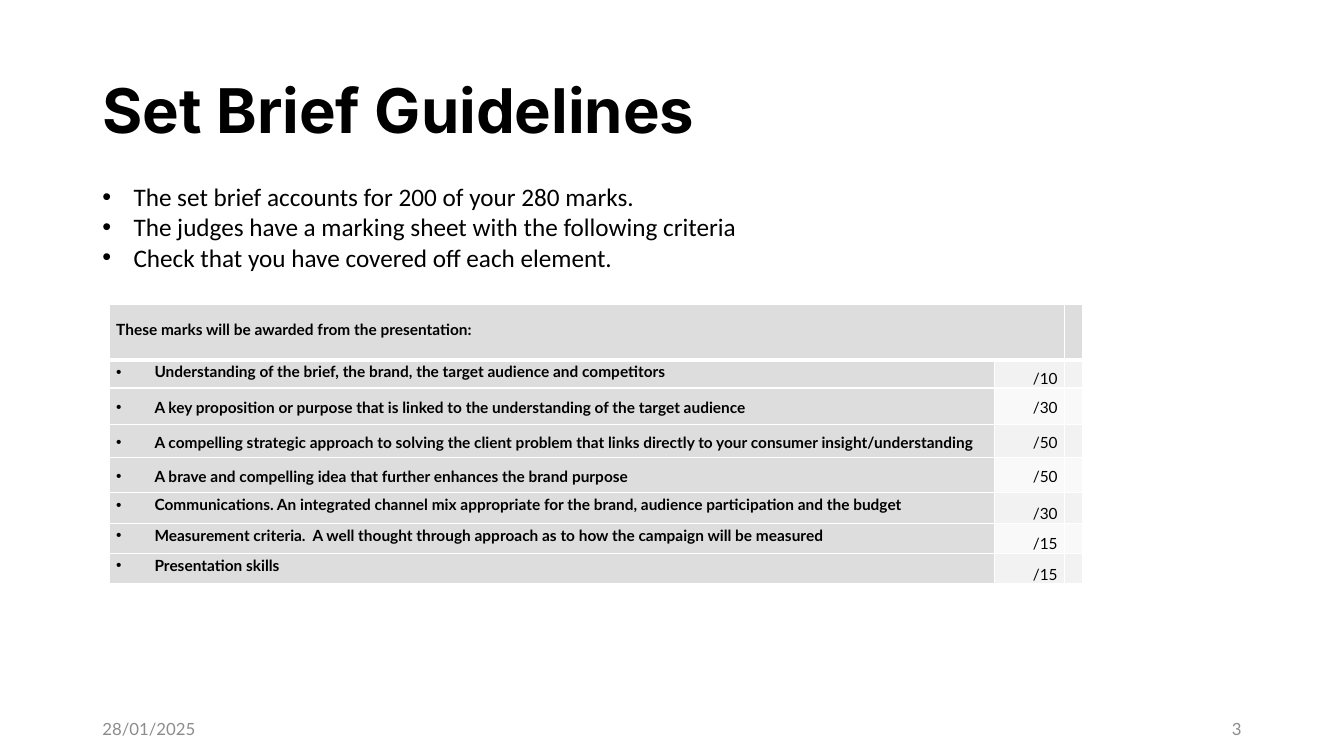
from lxml.etree import SubElement
from pptx import Presentation
from pptx.dml.color import RGBColor
from pptx.enum.text import MSO_ANCHOR, PP_ALIGN
from pptx.oxml import parse_xml
from pptx.oxml.ns import nsdecls, qn
from pptx.util import Inches, Pt

COLORS = {
    "text": "000000",
    "footer": "8C8C8C",
    "label": "DDDDDD",
    "odd": "F2F2F2",
    "even": "F9F9F9",
    "border": "FFFFFF",
}
GRID_COLUMNS, GRID_ROWS = 160, 90

BULLETS = [
    "The set brief accounts for 200 of your 280 marks.",
    "The judges have a marking sheet with the following criteria",
    "Check that you have covered off each element.",
]
TABLE_HEADING = "These marks will be awarded from the presentation:"
TOP, MIDDLE, BOTTOM = MSO_ANCHOR.TOP, MSO_ANCHOR.MIDDLE, MSO_ANCHOR.BOTTOM
CRITERIA = [
    ("Understanding of the brief, the brand, the target audience and competitors", "/10", 3.36, TOP),
    ("A key proposition or purpose that is linked to the understanding of the target audience", "/30", 4.32, MIDDLE),
    ("A compelling strategic approach to solving the client problem that links directly to your consumer insight/understanding", "/50", 3.96, MIDDLE),
    ("A brave and compelling idea that further enhances the brand purpose", "/50", 4.2, MIDDLE),
    ("Communications. An integrated channel mix appropriate for the brand, audience participation and the budget", "/30", 3.6, TOP),
    ("Measurement criteria.  A well thought through approach as to how the campaign will be measured", "/15", 3.6, TOP),
    ("Presentation skills", "/15", 3.6, TOP),
]


def write_text(frame, lines, font="Lato", size=11, color="text", bold=False,
               align=PP_ALIGN.LEFT, spacing=1.0, indent=0):
    for index, line in enumerate(lines):
        paragraph = frame.add_paragraph() if index else frame.paragraphs[0]
        paragraph.alignment = align
        paragraph.line_spacing = spacing
        paragraph.space_before = Pt(0)
        if indent:
            properties = paragraph._p.get_or_add_pPr()
            properties.set("marL", str(Inches(indent)))
            properties.set("indent", str(-Inches(indent)))
            SubElement(properties, qn("a:buFont"), typeface="Arial")
            SubElement(properties, qn("a:buChar"), char="•")
        run = paragraph.add_run()
        run.text = line
        run.font.name = font
        run.font.size = Pt(size)
        run.font.bold = bold
        run.font.color.rgb = RGBColor.from_string(COLORS[color])


class SlideBuilder:
    def __init__(self, presentation):
        self.column = presentation.slide_width / GRID_COLUMNS
        self.row = presentation.slide_height / GRID_ROWS
        self.slide = presentation.slides.add_slide(presentation.slide_layouts[5])

    def across(self, columns):
        return round(columns * self.column)

    def down(self, rows):
        return round(rows * self.row)

    def box(self, left, top, width, height):
        return self.across(left), self.down(top), self.across(width), self.down(height)

    def title(self, text, *place):
        shape = self.slide.shapes.title
        shape.left, shape.top, shape.width, shape.height = self.box(*place)
        shape.text_frame.vertical_anchor = MIDDLE
        write_text(shape.text_frame, [text], font="Inter", size=44, bold=True, spacing=0.9)

    def text(self, lines, *place, anchor=TOP, **style):
        frame = self.slide.shapes.add_textbox(*self.box(*place)).text_frame
        frame.word_wrap = True
        frame.vertical_anchor = anchor
        write_text(frame, lines, **style)

    def cell(self, cell, fill, text="", anchor=TOP, bottom_border=1, bottom_margin=0, **style):
        cell.fill.solid()
        cell.fill.fore_color.rgb = RGBColor.from_string(COLORS[fill])
        cell.vertical_anchor = anchor
        cell.margin_left = cell.margin_right = Inches(0.07)
        cell.margin_top, cell.margin_bottom = 0, Inches(bottom_margin)
        if text:
            write_text(cell.text_frame, [text], spacing=1.15, **style)
        else:
            SubElement(cell.text_frame.paragraphs[0]._p, qn("a:endParaRPr"), sz="1100")
        borders = {"L": 1, "R": 1, "T": 1, "B": bottom_border}
        for position, (side, points) in enumerate(borders.items()):
            line = parse_xml(
                f'<a:ln{side} {nsdecls("a")} w="{Pt(points)}"><a:solidFill>'
                f'<a:srgbClr val="{COLORS["border"]}"/></a:solidFill></a:ln{side}>'
            )
            cell._tc.get_or_add_tcPr().insert(position, line)

    def marking_table(self, left, top, widths, heading_height):
        heights = [heading_height] + [height for _, _, height, _ in CRITERIA]
        place = self.box(left, top, sum(widths), sum(heights))
        table = self.slide.shapes.add_table(len(heights), len(widths), *place).table
        table.horz_banding = False
        for column, width in zip(table.columns, widths):
            column.width = self.across(width)
        for row, height in zip(table.rows, heights):
            row.height = self.down(height)

        table.cell(0, 0).merge(table.cell(0, 1))
        self.cell(table.cell(0, 0), "label", TABLE_HEADING, BOTTOM,
                  bottom_border=3, bottom_margin=0.21, bold=True)
        for index in (1, 2):
            self.cell(table.cell(0, index), "label", bottom_border=3)

        for index, (criterion, mark, _, anchor) in enumerate(CRITERIA, start=1):
            band = "odd" if index % 2 else "even"
            mark_anchor = BOTTOM if anchor == TOP else MIDDLE
            self.cell(table.cell(index, 0), "label", criterion, anchor, bold=True, indent=0.38)
            self.cell(table.cell(index, 1), band, mark, mark_anchor, align=PP_ALIGN.RIGHT)
            self.cell(table.cell(index, 2), band)


def main():
    presentation = Presentation()
    presentation.slide_width = Inches(13.33)
    presentation.slide_height = Inches(7.5)
    builder = SlideBuilder(presentation)
    builder.title("Set Brief Guidelines", 11, 4.8, 138, 17.4)
    footer = {"anchor": MIDDLE, "size": 12, "color": "footer"}
    builder.text(["28/01/2025"], 11, 85.2, 36, 3, **footer)
    builder.text(["3"], 113, 85.2, 36, 3, align=PP_ALIGN.RIGHT, **footer)
    builder.marking_table(13, 36.24, [105.36, 8.4, 2.16], 6.6)
    builder.text(BULLETS, 11, 21, 79.6, 12.12, font="Calibri", size=18, indent=0.31)
    presentation.save("out.pptx")


if __name__ == "__main__":
    main()
